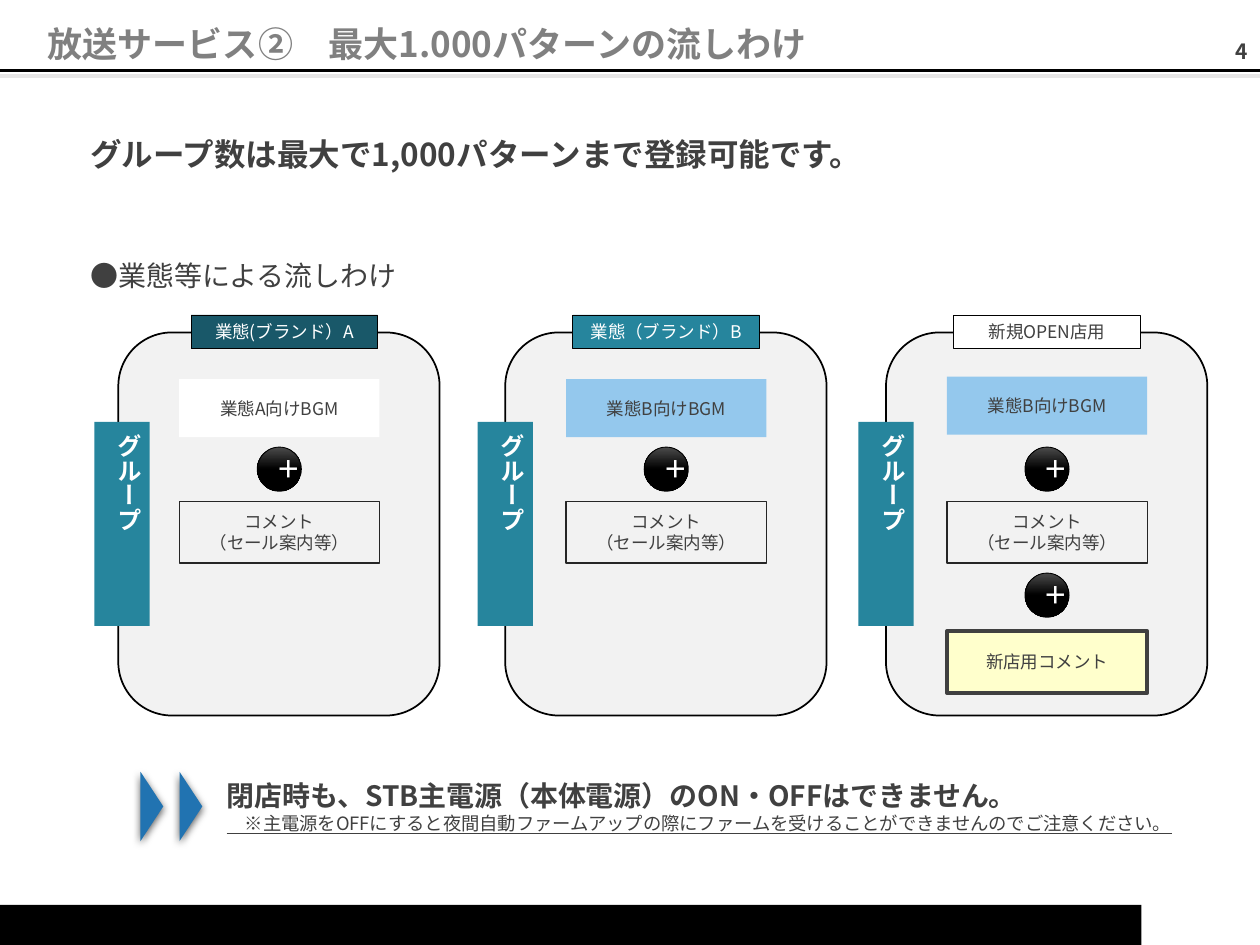
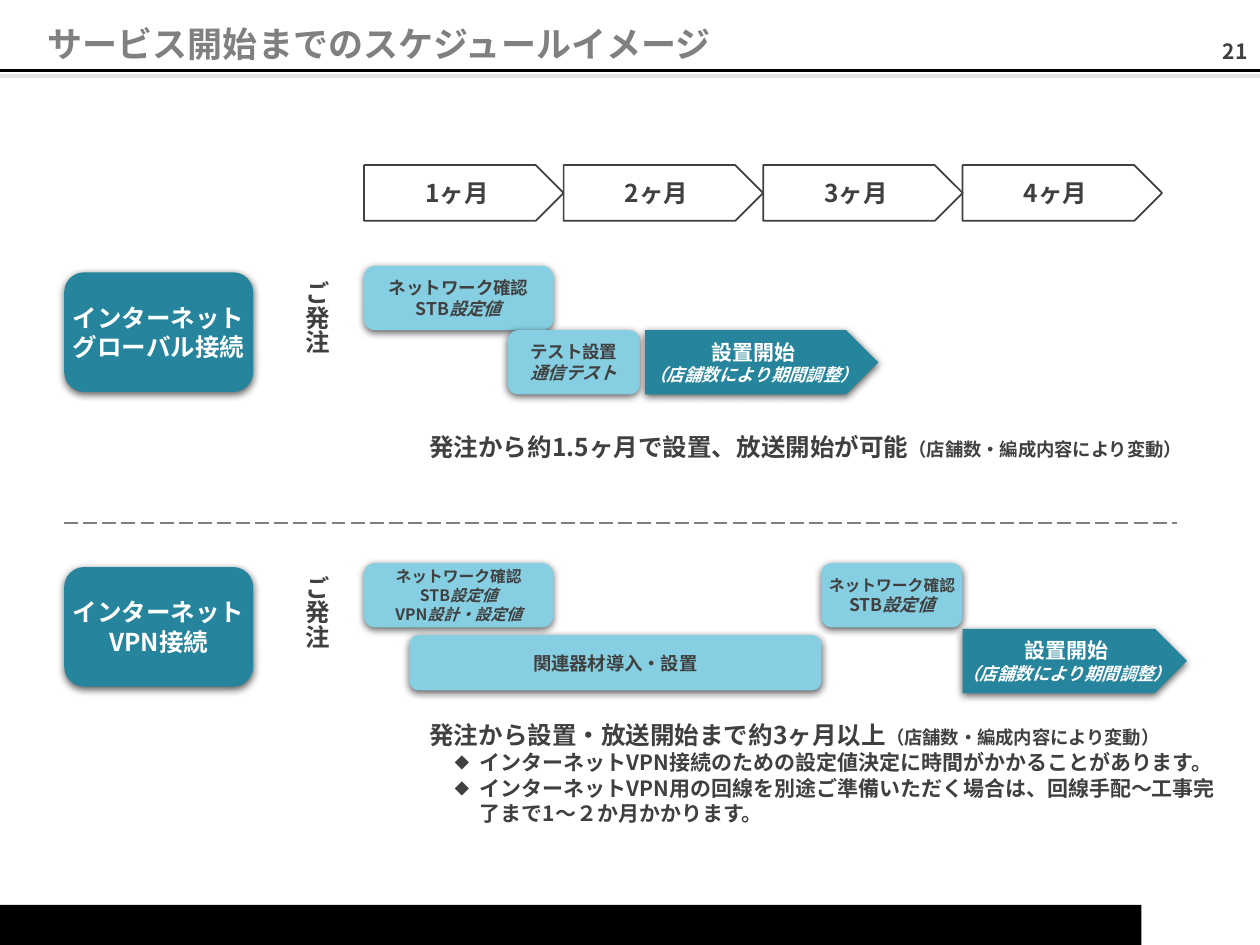
from lxml.etree import SubElement
from pptx import Presentation
from pptx.dml.color import RGBColor
from pptx.enum.dml import MSO_LINE as Dash
from pptx.enum.shapes import MSO_CONNECTOR as Link, MSO_SHAPE as Kind
from pptx.enum.text import MSO_ANCHOR as Anchor, MSO_AUTO_SIZE as Fit, PP_ALIGN as Align
from pptx.oxml.ns import qn
from pptx.util import Pt

FACE = "Noto Sans CJK JP"
BLACK, WHITE, INK, GRAY = "000000", "FFFFFF", "404040", "808080"
TEAL, DEEP, AQUA, SKY = "26859D", "195869", "86CFE2", "94C8ED"
WIDE, HIGH = 720, 540


def color(code):
    return RGBColor.from_string(code)


def box(x, y, w, h):
    return Pt(x), Pt(y), Pt(w), Pt(h)


def add(parent, tag, **attrs):
    return SubElement(parent, qn(tag), attrs)


# --- Text -------------------------------------------------------------

def style(run, size, hue, marks):
    """Marks: b bold, i italic, u underlined."""
    font = run.font
    font.size, font.name = Pt(size), FACE
    font.color.rgb = color(hue)
    font.bold, font.italic, font.underline = (m in marks for m in "biu")
    add(run.font._element, "a:ea", typeface=FACE)


def write(shape, rows, hue=INK, align=Align.CENTER, anchor=Anchor.MIDDLE,
          wrap=True, grow=False, vert=False):
    """Each row is a list of (text, size, marks)."""
    frame = shape.text_frame
    frame.word_wrap, frame.vertical_anchor = wrap, anchor
    frame.auto_size = Fit.SHAPE_TO_FIT_TEXT if grow else Fit.NONE
    if vert:
        frame._txBody.bodyPr.set("vert", "eaVert")
    for i, row in enumerate(rows):
        para = frame.add_paragraph() if i else frame.paragraphs[0]
        para.alignment = align
        for words, size, marks in row:
            run = para.add_run()
            run.text = words
            style(run, size, hue, marks)


def note(slide, place, rows, hue=INK, **opts):
    shape = slide.shapes.add_textbox(*box(*place))
    opts = {"align": Align.LEFT, "anchor": Anchor.TOP, "grow": True, **opts}
    write(shape, rows, hue, **opts)
    return shape


def bullet(para):
    props = para._p.get_or_add_pPr()
    props.set("marL", str(Pt(28.8)))
    props.set("indent", str(Pt(-14.4)))
    add(props, "a:buSzPct", val="70000")
    add(props, "a:buFont", typeface=FACE)
    add(props, "a:buChar", char="◆")


# --- Shapes -----------------------------------------------------------

def draw(slide, kind, place, fill=None, edge=None, width=1.0, glow=False):
    shape = slide.shapes.add_shape(kind, *box(*place))
    shape.shadow.inherit = False
    if fill:
        shape.fill.solid()
        shape.fill.fore_color.rgb = color(fill)
    else:
        shape.fill.background()
    if edge:
        shape.line.color.rgb = color(edge)
        shape.line.width = Pt(width)
    else:
        shape.line.fill.background()
    if glow:
        cast = add(shape._element.spPr.find(qn("a:effectLst")), "a:outerShdw",
                   blurRad=str(Pt(4.5)), dist=str(Pt(1.5)), dir="5400000",
                   rotWithShape="0")
        tint = add(cast, "a:srgbClr", val=BLACK)
        add(tint, "a:alpha", val="63000")
    return shape


def rule(slide, x, y, end, hue, width, dash=None):
    line = slide.shapes.add_connector(Link.STRAIGHT, Pt(x), Pt(y), Pt(end), Pt(y))
    line.line.color.rgb = color(hue)
    line.line.width = Pt(width)
    if dash:
        line.line.dash_style = dash
    add(line._element.spPr, "a:effectLst")


def base(deck, title, page):
    """Blank slide with the shared bands, page number and title."""
    slide = deck.slides.add_slide(deck.slide_layouts[6])
    draw(slide, Kind.RECTANGLE, (0, 517, 652.3, 23), BLACK)
    rule(slide, 0, 40.3, WIDE, BLACK, 2.25)
    rule(slide, 0, 43.2, WIDE, "E7E6E6", 2.25)
    note(slide, (640.8, 18.7, 79.2, 20.9), [[(page, 12, "b")]],
         align=Align.RIGHT, anchor=Anchor.MIDDLE, grow=False)
    note(slide, (20.2, 9.4, 607, 31.7), [[(title, 20, "b")]], GRAY)
    return slide


# --- Slide 1: groups --------------------------------------------------

def plus(slide, x, y):
    ball = draw(slide, Kind.OVAL, (x, y, 25.2, 25.2), BLACK, BLACK, 0.5)
    ball.fill.gradient()
    ball.fill.gradient_angle = 270
    for stop, spot, hue in zip(ball.fill.gradient_stops, (0, 0.5), ("4B4B4B", BLACK)):
        stop.position, stop.color.rgb = spot, color(hue)
    write(ball, [[("＋", 14, "b")]], WHITE)


def card(slide, x, y, tag, music, tag_x=38.6, strip_x=-15.8, music_y=26.7, new=False):
    """Group card; tag is (text, fill, hue) and music is (text, fill)."""
    draw(slide, Kind.ROUNDED_RECTANGLE, (x, y, 183.6, 218.9), "F2F2F2", BLACK)
    label, fill, hue = tag
    head = draw(slide, Kind.RECTANGLE, (x + tag_x, y - 10, 106.6, 19.4),
                fill, BLACK, 0.5)
    write(head, [[(label, 10, "")]], hue, anchor=Anchor.TOP, grow=True)

    # Stack of sources joined by plus signs
    left, mid = x + 34.8, x + 79.4
    label, fill = music
    part = draw(slide, Kind.RECTANGLE, (left, y + music_y, 114.5, 33.1), fill)
    write(part, [[(label, 10, "")]])
    plus(slide, mid, y + 65.5)
    part = draw(slide, Kind.RECTANGLE, (left, y + 96.5, 114.5, 35.3),
                None, "262626", 0.75)
    write(part, [[("コメント", 10, "")], [("（セール案内等）", 10, "")]])
    if new:
        plus(slide, mid, y + 137.5)
        part = draw(slide, Kind.RECTANGLE, (left, y + 170.6, 114.5, 35.3),
                    "FFFFCC", INK, 2.25)
        write(part, [[("新店用コメント", 10, "")]])

    # Side strip
    strip = draw(slide, Kind.RECTANGLE, (x + strip_x, y + 51.1, 31.7, 116.6), TEAL)
    write(strip, [[("グループ", 14, "b")]], WHITE, anchor=Anchor.TOP,
          grow=True, vert=True)


def warn(slide, x, y):
    """Double arrow with the caution beside it."""
    for i in range(2):
        mark = draw(slide, Kind.ISOSCELES_TRIANGLE,
                    (x + 22.3 * i, y + 13, 39.6, 13), "2173B1", glow=True)
        mark.rotation = 90
    note(slide, (x + 55.4, y, 571, 39.6), [
        [("閉店時も、STB主電源（本体電源）のON・OFFはできません。", 16, "b")],
        [("　※主電源をOFFにすると夜間自動ファームアップの際に"
          "ファームを受けることができませんのでご注意ください。", 10.5, "u")]])


def groups(deck):
    slide = base(deck, "放送サービス②　最大1.000パターンの流しわけ", "4")
    note(slide, (44.6, 73.4, 527.8, 28.8),
         [[("グループ数は最大で1,000パターンまで登録可能です。", 18, "b")]])
    note(slide, (44.6, 144, 223.9, 26.6), [[("●業態等による流しわけ", 16, "")]])
    top, shop = 190, ("業態B向けBGM", SKY)
    card(slide, 67.6, top, ("業態(ブランド）A", DEEP, WHITE), ("業態A向けBGM", WHITE),
         tag_x=41.6, strip_x=-13.7)
    card(slide, 288.7, top, ("業態（ブランド）B", TEAL, WHITE), shop)
    card(slide, 506.3, top, ("新規OPEN店用", WHITE, INK), shop, music_y=25.3, new=True)
    warn(slide, 67, 441.3)


# --- Slide 2: schedule ------------------------------------------------

def months(slide, x, y, count):
    for i in range(count):
        arrow = draw(slide, Kind.PENTAGON, (x + 114 * i, y, 114, 31.9), None, INK)
        write(arrow, [[(f"{i + 1}ヶ月", 14, "b")]], wrap=False)


def lane(slide, x, y, name, steps, start):
    """Route label, order mark, steps (place, rows) and start arrow (x, y, w)."""
    label = draw(slide, Kind.ROUNDED_RECTANGLE, (x, y + 3.6, 108, 68.4), TEAL, glow=True)
    write(label, [[(row, 14, "b")] for row in name], WHITE, wrap=False)
    order = draw(slide, Kind.ROUNDED_RECTANGLE, (x + 129.6, y, 29.5, 75.6), WHITE)
    write(order, [[("ご発注", 14, "b")]], wrap=False, vert=True)
    for (dx, dy, w, h), rows in steps:
        step = draw(slide, Kind.ROUNDED_RECTANGLE, (x + dx, y + dy, w, h), AQUA, glow=True)
        write(step, rows, wrap=False)
    dx, dy, w = start
    arrow = draw(slide, Kind.PENTAGON, (x + dx, y + dy, w, 36.7), TEAL, glow=True)
    write(arrow, [[("設置開始", 12, "b")], [("（店舗数により期間調整）", 10, "bi")]],
          WHITE, wrap=False)


def check(size, low):
    """Rows of the network check step."""
    return [[("ネットワーク確認", size, "b")],
            [("STB", low, "b"), ("設定値", low, "bi")]]


def plan(deck):
    slide = base(deck, "サービス開始までのスケジュールイメージ", "21")
    months(slide, 208.1, 94.3, 4)
    left, vary = 36.7, ("（店舗数・編成内容により変動）", 10.5, "b")

    # Global connection
    lane(slide, left, 152, ("インターネット", "グローバル接続"), [
        ((171.4, 0, 108, 36.7), check(10, 10)),
        ((253.4, 36.7, 75.6, 36.7),
         [[("テスト設置", 10, "b")], [("通信テスト", 10, "bi")]]),
    ], (332, 36.7, 133.2))
    note(slide, (238.3, 243.4, 450.7, 24.5),
         [[("発注から約1.5ヶ月で設置、放送開始が可能", 14, "b"), vary]])

    rule(slide, left, 298.8, 672.5, GRAY, 1, Dash.LONG_DASH)

    # VPN connection
    lane(slide, left, 320.4, ("インターネット", "VPN接続"), [
        ((171.4, 1.4, 108, 36.7),
         check(9, 9) + [[("VPN", 9, "b"), ("設計・設定値", 9, "bi")]]),
        ((197.3, 42.5, 235.4, 31.7), [[("関連器材導入・設置", 10.5, "b")]]),
        ((432.7, 1.4, 80.6, 36.7), check(9, 10)),
    ], (513.4, 38.9, 128.2))
    text = note(slide, (238.3, 408.2, 467.3, 67.7), [
        [("発注から設置・放送開始まで約3ヶ月以上", 14, "b"), vary],
        [("インターネットVPN接続のための設定値決定に時間がかかることがあります。", 12, "b")],
        [("インターネットVPN用の回線を別途ご準備いただく場合は、"
          "回線手配～工事完了まで1～２か月かかります。", 12, "b")]])
    for para in text.text_frame.paragraphs[1:]:
        bullet(para)


def main():
    deck = Presentation()
    deck.slide_width, deck.slide_height = Pt(WIDE), Pt(HIGH)
    groups(deck)
    plan(deck)
    deck.save("out.pptx")


if __name__ == "__main__":
    main()
